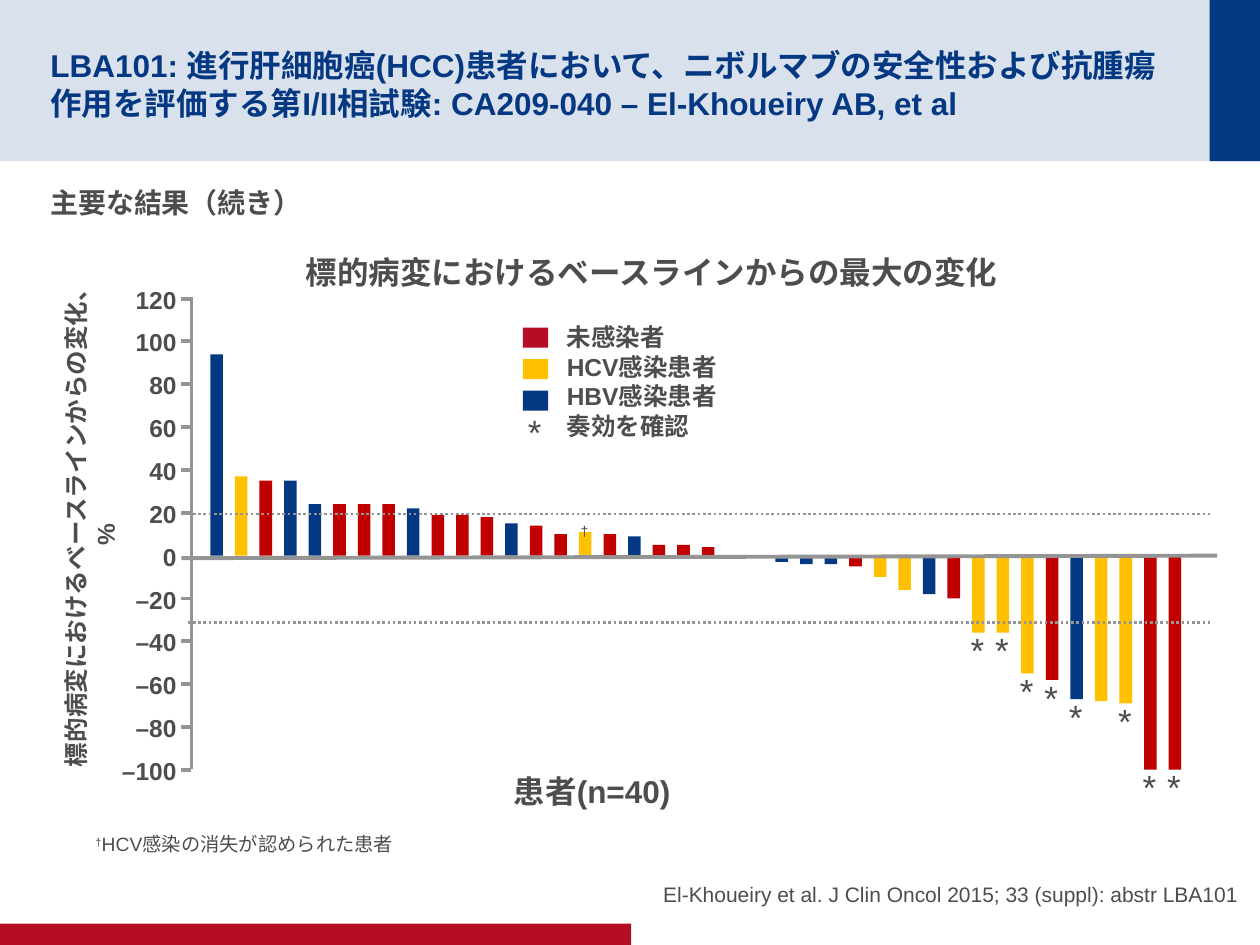
import pptx
import pptx.dml.color
import pptx.enum.dml
import pptx.enum.shapes
import pptx.enum.text
import pptx.oxml.ns
import pptx.util
from lxml import etree
from pptx.util import Inches

NAVY, GOLD, RED, CRIMSON = "043882", "FFC000", "C00000", "B60D27"
TEXT, AXIS = "4D4D4D", "949494"
ALIGN = pptx.enum.text.PP_ALIGN
ANCHOR = pptx.enum.text.MSO_ANCHOR
SHAPE = pptx.enum.shapes.MSO_SHAPE
STRAIGHT = pptx.enum.shapes.MSO_CONNECTOR.STRAIGHT
DOTS = pptx.enum.dml.MSO_LINE.ROUND_DOT

deck = pptx.Presentation()
deck.slide_width, deck.slide_height = Inches(10), Inches(7.5)
page = deck.slides.add_slide(deck.slide_layouts[6])


def paint(target, colour):
    """Give a fill, line or font a solid hex colour."""
    if hasattr(target, "solid"):
        target.solid()
        target.fore_color.rgb = pptx.dml.color.RGBColor.from_string(colour)
    else:
        target.color.rgb = pptx.dml.color.RGBColor.from_string(colour)


def add_text(text, left, top, width, height, size=14, bold=True, colour=TEXT,
             align=ALIGN.LEFT, anchor=ANCHOR.TOP, insets=(0.1, 0.05, 0.1, 0.05),
             after=0, raised=""):
    """Add a text box; `raised` is a superscript placed before the text."""
    box = page.shapes.add_textbox(Inches(left), Inches(top), Inches(width), Inches(height))
    frame = box.text_frame
    frame.word_wrap = True
    frame.vertical_anchor = anchor
    (frame.margin_left, frame.margin_top,
     frame.margin_right, frame.margin_bottom) = map(Inches, insets)
    for number, line in enumerate(text.split("\n")):
        para = frame.paragraphs[0] if number == 0 else frame.add_paragraph()
        para.alignment = align
        para.space_after = pptx.util.Pt(after)
        for words, baseline in ((raised, "30000"), (line, None)):
            if not words:
                continue
            span = para.add_run()
            span.text = words
            span.font.name = "Arial"
            span.font.size = pptx.util.Pt(size)
            span.font.bold = bold
            paint(span.font, colour)
            if baseline:
                span.font._element.set("baseline", baseline)
    return box


# Plain rectangles: page bands and legend keys
rectangles = [
    (0, 0, 10, 1.28, NAVY),
    (9.6, 0, 0.4, 1.28, NAVY),
    (0, 7.33, 5.01, 0.17, CRIMSON),
    (4.15, 2.6, 0.2, 0.16, CRIMSON),
    (4.15, 2.85, 0.2, 0.16, GOLD),
    (4.15, 3.1, 0.2, 0.16, NAVY),
]

# Best change per patient in %, left to right; None marks no visible bar
patients = [
    (94, NAVY), (37, GOLD), (35, RED), (35, NAVY), (24, NAVY), (24, RED), (24, RED),
    (24, RED), (22, NAVY), (19, RED), (19, RED), (18, RED), (15, NAVY), (14, RED),
    (10, RED), (11, GOLD), (10, RED), (9, NAVY), (5, RED), (5, RED), (4, RED),
    None, None, (-3, NAVY), (-4, NAVY), (-4, NAVY), (-5, RED), (-10, GOLD), (-16, GOLD),
    (-18, NAVY), (-20, RED), (-36, GOLD), (-36, GOLD), (-55, GOLD), (-58, RED),
    (-67, NAVY), (-68, GOLD), (-69, GOLD), (-100, RED), (-100, RED),
]
responders = {31, 32, 33, 34, 35, 37, 38, 39}
zero, per_percent = 4.41, 0.017
first_bar, pitch, bar_width = 1.67, 0.195, 0.1
stars = [(4.09, 3.21)]
for index, patient in enumerate(patients):
    if patient is None:
        continue
    value, colour = patient
    left, tip = first_bar + index * pitch, zero - value * per_percent
    rectangles.append((left, min(tip, zero), bar_width, abs(tip - zero), colour))
    if index in responders:
        stars.append((left - 0.11, tip - 0.08))

for number, (left, top, width, height, colour) in enumerate(rectangles):
    block = page.shapes.add_shape(SHAPE.RECTANGLE, Inches(left), Inches(top),
                                  Inches(width), Inches(height))
    block.shadow.inherit = False
    block.line.fill.background()
    paint(block.fill, colour)
    if number == 0:  # the header band is a pale tint
        tint = block.fill._xPr.find(".//" + pptx.oxml.ns.qn("a:srgbClr"))
        etree.SubElement(tint, pptx.oxml.ns.qn("a:alpha"), val="15000")

# Axis, ticks, thresholds and baseline
ticks = range(120, -101, -20)
lines = [(1.52, 2.36, 1.52, 6.1, 2.25, None)]
for value in ticks:
    y = zero - value * per_percent
    if value:
        lines.append((1.44, y, 1.52, y, 2.25, None))
    label = str(value).replace("-", "–")
    add_text(label, 0.6, y - 0.16, 0.9, 0.34, align=ALIGN.RIGHT)
lines += [
    (1.49, 4.94, 9.6, 4.94, 1.5, DOTS),
    (1.49, 4.08, 9.6, 4.08, 1.5, DOTS),
    (1.44, 4.43, 9.66, 4.41, 2.25, None),
]
for x1, y1, x2, y2, weight, dash in lines:
    rule = page.shapes.add_connector(STRAIGHT, Inches(x1), Inches(y1), Inches(x2), Inches(y2))
    paint(rule.line, AXIS)
    rule.line.width = pptx.util.Pt(weight)
    if dash:
        rule.line.dash_style = dash
    etree.SubElement(rule._element.spPr, pptx.oxml.ns.qn("a:effectLst"))

# Headings
add_text("LBA101: 進行肝細胞癌(HCC)患者において、ニボルマブの安全性および抗腫瘍作用を評価する"
         "第I/II相試験: CA209-040 – El-Khoueiry AB, et al",
         0.4, 0.2, 9.01, 0.88, size=18, colour=NAVY, anchor=ANCHOR.MIDDLE,
         insets=(0, 0.05, 0, 0))
add_text("主要な結果（続き）", 0.4, 1.42, 9.19, 4.95, size=16, insets=(0, 0.05, 0.1, 0.05))

# Chart titles, legend and response marks
add_text("標的病変におけるベースラインからの最大の変化", 2.33, 1.96, 6.05, 0.4, size=18)
axis_title = add_text("標的病変におけるベースラインからの変化、%", -1.38, 4.07, 3.97, 0.34,
                      align=ALIGN.CENTER)
axis_title.rotation = 270
add_text("患者(n=40)", 3.98, 6.08, 2.03, 0.4, size=18)
add_text("未感染者\nHCV感染患者\nHBV感染患者\n奏効を確認", 4.4, 2.51, 2.11, 1.04)
for left, top in stars:
    add_text("*", left, top, 0.31, 0.44, size=20, bold=False)

# Footnote, its mark on the chart, and citation
add_text("HCV感染の消失が認められた患者", 0.66, 6.56, 2.7, 0.29, size=11, bold=False, raised="†")
add_text("", 4.51, 4.07, 0.28, 0.26, bold=False, raised="†")
add_text("El-Khoueiry et al. J Clin Oncol 2015; 33 (suppl): abstr LBA101",
         5.08, 6.67, 4.75, 0.53, size=12, bold=False, align=ALIGN.RIGHT,
         anchor=ANCHOR.BOTTOM, insets=(0, 0, 0, 0), after=4)

deck.save("out.pptx")
